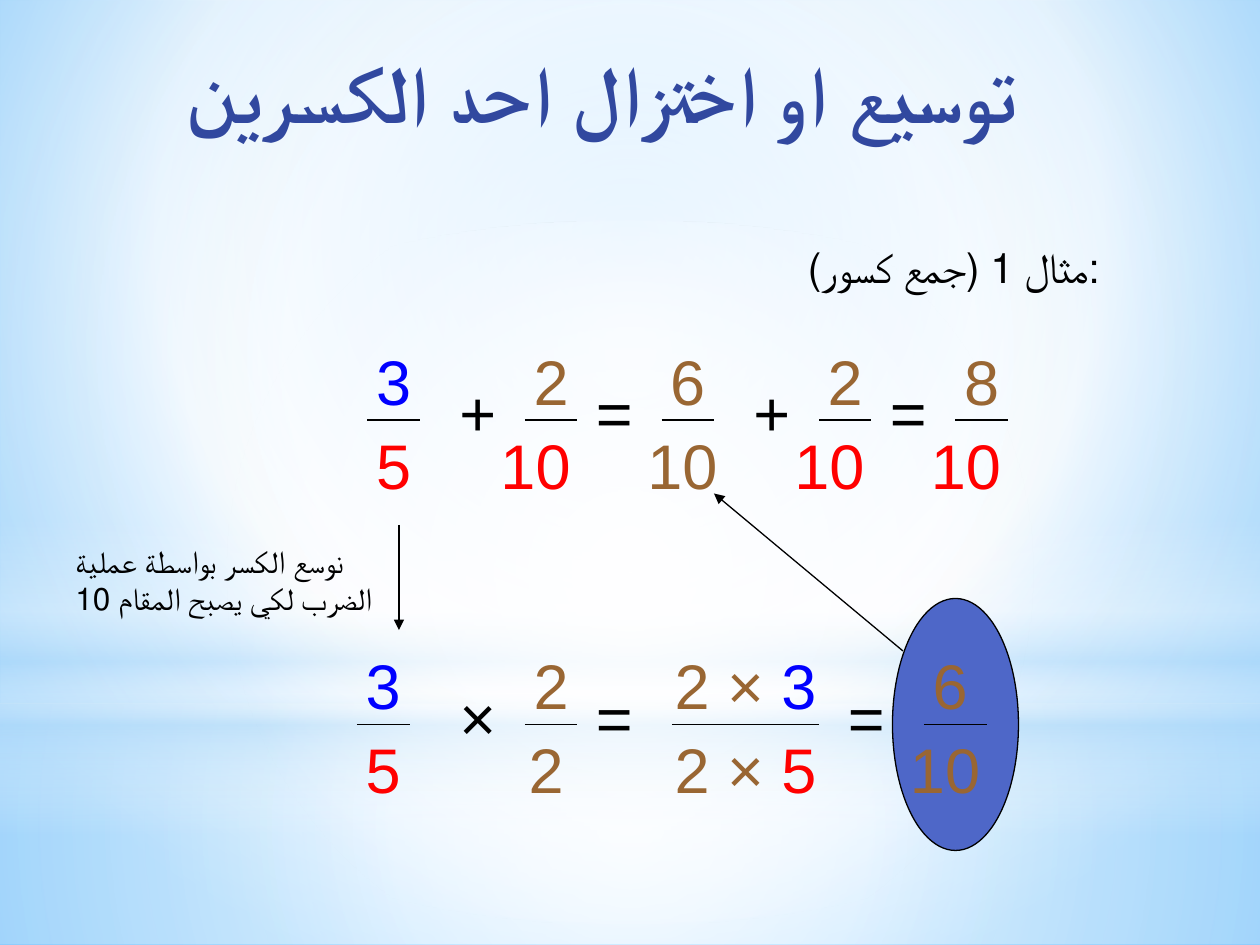
from dataclasses import dataclass

from lxml import etree
from pptx import Presentation
from pptx.dml.color import RGBColor
from pptx.enum.shapes import MSO_CONNECTOR, MSO_SHAPE
from pptx.enum.text import MSO_ANCHOR, MSO_AUTO_SIZE, PP_ALIGN
from pptx.oxml.ns import qn
from pptx.util import Cm, Pt

STRAIGHT = MSO_CONNECTOR.STRAIGHT
RECTANGLE, OVAL = MSO_SHAPE.RECTANGLE, MSO_SHAPE.OVAL
CENTER, LEFT = PP_ALIGN.CENTER, PP_ALIGN.LEFT
TOP = MSO_ANCHOR.TOP
NO_FIT, GROW = MSO_AUTO_SIZE.NONE, MSO_AUTO_SIZE.SHAPE_TO_FIT_TEXT


@dataclass(frozen=True)
class Theme:
    title_font: str = "Karla"
    body_font: str = "Arial"
    title_size: float = 46
    math_size: float = 36
    example_size: float = 24
    note_size: float = 18
    line_width: float = 0.75
    title: str = "31489F"
    ink: str = "000000"
    blue: str = "0000FF"
    red: str = "FF0000"
    brown: str = "996633"
    highlight: str = "4E67C8"
    white: str = "FFFFFF"
    haze: str = "B4DCFA"
    sky: str = "9ED5FF"
    deep_sky: str = "5BB9FF"


THEME = Theme()
INK, BLUE, RED, BROWN = THEME.ink, THEME.blue, THEME.red, THEME.brown
SYMBOL_WIDTH, LINE_HEIGHT = 7, 8.4


@dataclass(frozen=True)
class Fraction:
    """Runs above and below a bar; lefts and widths in grid steps."""
    left: float
    numerator: list
    denominator: list
    denominator_left: float
    denominator_width: float = 10
    width: float = SYMBOL_WIDTH
    bar_length: float = 5


@dataclass(frozen=True)
class Operator:
    left: float
    symbol: str


def grid(steps):
    """Length of a number of steps, twelve steps to 2.54 cm."""
    return Cm(steps * 2.54 / 12)


def set_gradient(parent, stops, center=None):
    """Swap the solid fill of parent for a radial gradient, or a vertical one."""
    gradient = etree.Element(qn("a:gradFill"), rotWithShape="1")
    stop_list = etree.SubElement(gradient, qn("a:gsLst"))
    for position, color, alpha in stops:
        stop = etree.SubElement(stop_list, qn("a:gs"), pos=str(position * 1000))
        tint = etree.SubElement(stop, qn("a:srgbClr"), val=color)
        if alpha < 100:
            etree.SubElement(tint, qn("a:alpha"), val=str(alpha * 1000))
    if center:
        radial = etree.SubElement(gradient, qn("a:path"))
        radial.set("path", "circle")
        edges = {side: str(value * 1000) for side, value in zip("ltrb", center)}
        etree.SubElement(radial, qn("a:fillToRect"), **edges)
    else:
        etree.SubElement(gradient, qn("a:lin"), ang="5400000", scaled="0")
    parent.replace(parent.find(qn("a:solidFill")), gradient)


def add_backdrop(slide, width):
    white, haze = THEME.white, THEME.haze
    middle = (50, 50, 50, 50)
    slide.background.fill.solid()
    set_gradient(slide._element.find(".//" + qn("p:bgPr")),
                 [(0, THEME.sky, 100), (60, white, 100), (100, THEME.deep_sky, 100)],
                 (20, 10, 20, 60))
    layers = [
        (RECTANGLE, 67, 23, [(0, white, 91), (37, white, 76), (100, haze, 79)], middle),
        (RECTANGLE, 0, 67, [(0, white, 89), (48, white, 62), (100, haze, 79)], middle),
        (RECTANGLE, 49.5, 30, [(0, white, 0), (29, white, 30), (45, haze, 40),
                               (55, white, 26), (65, haze, 60), (100, white, 0)], None),
        (OVAL, 21, 67, [(0, white, 100), (56, white, 0)], middle),
    ]
    for outline, top, height, stops, center in layers:
        layer = slide.shapes.add_shape(outline, 0, grid(top), width, grid(height))
        layer.shadow.inherit = False
        layer.fill.solid()
        layer.line.fill.background()
        set_gradient(layer._element.spPr, stops, center)


def style_run(run, font, size, color, bold=False):
    run.font.name = font
    run.font.size = Pt(size)
    run.font.bold = bold
    run.font.color.rgb = RGBColor.from_string(color)


def add_title(slide, left, top, width, height):
    title = slide.shapes.title
    slide.shapes._spTree.append(title._element)  # in front of the backdrop
    title.left, title.top, title.width, title.height = left, top, width, height
    frame = title.text_frame
    frame.text = "توسيع او اختزال احد الكسرين"
    frame.vertical_anchor = TOP
    frame.auto_size = NO_FIT
    frame.paragraphs[0].alignment = CENTER
    style_run(frame.paragraphs[0].runs[0], THEME.title_font, THEME.title_size,
              THEME.title, bold=True)


def add_text(shapes, left, top, width, height, runs, size=THEME.math_size,
             alignment=CENTER):
    frame = shapes.add_textbox(left, top, width, height).text_frame
    frame.word_wrap = True
    frame.auto_size = GROW
    paragraph = frame.paragraphs[0]
    paragraph.alignment = alignment
    before = etree.SubElement(paragraph._p.get_or_add_pPr(), qn("a:spcBef"))
    etree.SubElement(before, qn("a:spcPct"), val="50000")
    for text, color in runs:
        run = paragraph.add_run()
        run.text = text
        style_run(run, THEME.body_font, size, color)


def add_line(shapes, start, end, arrow=False):
    line = shapes.add_connector(STRAIGHT, *map(grid, start + end))
    line.line.color.rgb = RGBColor.from_string(INK)
    line.line.width = Pt(THEME.line_width)
    if arrow:
        etree.SubElement(line.line._get_or_add_ln(), qn("a:tailEnd"), type="triangle")
    etree.SubElement(line._element.spPr, qn("a:effectLst"))


def add_fraction(slide, left, bar, fraction):
    shapes = slide.shapes.add_group_shape().shapes
    start = left + fraction.left
    add_text(shapes, grid(start), grid(bar - 8), grid(fraction.width),
             grid(LINE_HEIGHT), fraction.numerator)
    add_line(shapes, (start + 1, bar), (start + 1 + fraction.bar_length, bar))
    add_text(shapes, grid(left + fraction.denominator_left), grid(bar),
             grid(fraction.denominator_width), grid(LINE_HEIGHT), fraction.denominator)


def add_equation(slide, left, bar, terms):
    """Lay out terms from left, with all fraction bars at one height."""
    for term in terms:
        if isinstance(term, Fraction):
            add_fraction(slide, left, bar, term)
        else:
            add_text(slide.shapes, grid(left + term.left), grid(bar - 5),
                     grid(SYMBOL_WIDTH), grid(LINE_HEIGHT), [(term.symbol, INK)])


def add_highlight(slide, left, top, width, height):
    oval = slide.shapes.add_shape(OVAL, left, top, width, height)
    oval.shadow.inherit = False
    oval.fill.solid()
    oval.fill.fore_color.rgb = RGBColor.from_string(THEME.highlight)
    oval.line.color.rgb = RGBColor.from_string(INK)
    oval.line.width = Pt(THEME.line_width)


ADDITION = [
    Fraction(1, [("3", BLUE)], [("5", RED)], 1, SYMBOL_WIDTH),
    Operator(9, "+"),
    Fraction(16, [("2", BROWN)], [("10", RED)], 13),
    Operator(22, "="),
    Fraction(29, [("6", BROWN)], [("10", BROWN)], 27),
    Operator(37, "+"),
    Fraction(44, [("2", BROWN)], [("10", RED)], 41),
    Operator(50, "="),
    Fraction(57, [("8", BROWN)], [("10", RED)], 54),
]
EXPANSION = [
    Fraction(0, [("3", BLUE)], [("5", RED)], 0, SYMBOL_WIDTH),
    Operator(9, "×"),
    Fraction(16, [("2", BROWN)], [("2", BROWN)], 14),
    Operator(22, "="),
    Fraction(30, [("2 × ", BROWN), ("3", BLUE)], [("2 × ", BROWN), ("5", RED)],
             28, 20, width=16, bar_length=14),
    Operator(46, "="),
    Fraction(54, [("6", BROWN)], [("10", BROWN)], 52, bar_length=6),
]


def main():
    prs = Presentation()
    prs.slide_width, prs.slide_height = Cm(25.4), Cm(19.05)
    slide = prs.slides.add_slide(prs.slide_layouts[5])
    add_backdrop(slide, prs.slide_width)
    add_highlight(slide, grid(85), grid(57), grid(12), grid(24))
    add_title(slide, Cm(1.9), Cm(0.74), Cm(20.47), Cm(3.18))
    add_text(slide.shapes, Cm(16.03), Cm(4.75), Cm(8.15), Cm(1.27),
             [("مثال 1 (جمع كسور):", INK)], THEME.example_size, LEFT)
    add_equation(slide, 33, 40, ADDITION)
    add_line(slide.shapes, (38, 50), (38, 60), arrow=True)
    add_text(slide.shapes, grid(6), grid(51), grid(32), grid(LINE_HEIGHT),
             [("نوسع الكسر بواسطة عملية الضرب لكي يصبح المقام 10", INK)],
             THEME.note_size, LEFT)
    add_equation(slide, 33, 69, EXPANSION)
    add_line(slide.shapes, (86, 62), (68, 47), arrow=True)
    prs.save("out.pptx")


if __name__ == "__main__":
    main()
